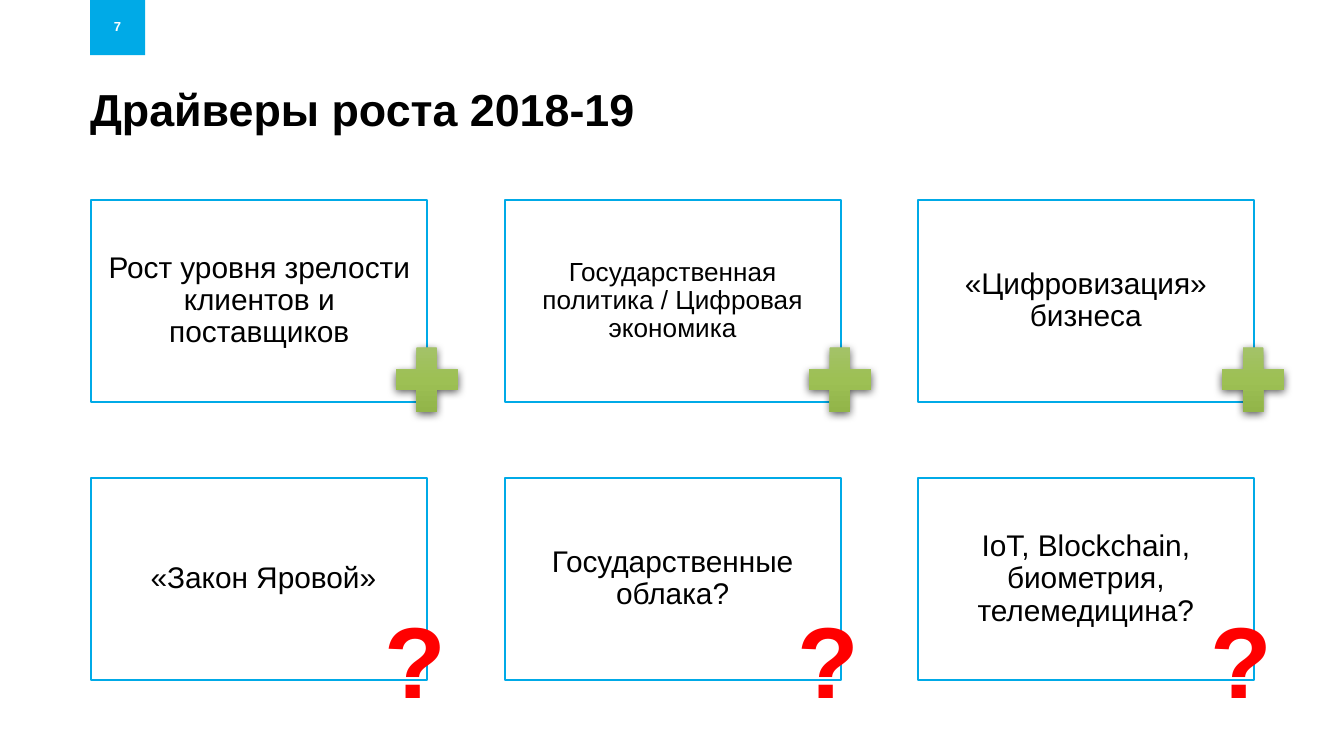
from copy import deepcopy

from lxml import etree
from pptx import Presentation
from pptx.dml.color import RGBColor
from pptx.enum.shapes import MSO_SHAPE
from pptx.enum.text import MSO_ANCHOR, PP_ALIGN
from pptx.oxml.ns import qn
from pptx.util import Inches, Pt

RECTANGLE, PLUS = MSO_SHAPE.RECTANGLE, MSO_SHAPE.MATH_PLUS
TOP, MIDDLE = MSO_ANCHOR.TOP, MSO_ANCHOR.MIDDLE
LEFT, CENTER = PP_ALIGN.LEFT, PP_ALIGN.CENTER

COLORS = {"accent": "00AAE7", "white": "FFFFFF", "black": "000000", "red": "FF0000"}
PLUS_GRADIENT = [(0, "A6C36F"), (0.5, "9DC054"), (1, "8DB045")]

TITLE = "Драйверы роста 2018-19"
PAGE_NUMBER = "7"
# Each row: its mark, then (driver, text size)
DRIVERS = [
    ("+", [("Рост уровня зрелости клиентов и поставщиков", 16),
           ("Государственная политика / Цифровая экономика", 14),
           ("«Цифровизация» бизнеса", 16)]),
    ("?", [(" «Закон Яровой»", 16),
           ("Государственные облака?", 16),
           ("IoT, Blockchain, биометрия, телемедицина?", 16)]),
]

SLIDE_WIDTH = Inches(10)
SLIDE_HEIGHT = SLIDE_WIDTH * 9 // 16
GRID_LEFT, GRID_TOP = 0.68, 1.49
LAST_COLUMN_LEFT = 6.83
CARD_WIDTH, CARD_HEIGHT = 2.5, 1.5
COLUMN_STEP = (LAST_COLUMN_LEFT - GRID_LEFT) / 2
ROW_STEP = 2.07
MARK_X = 2.18  # offset of a mark from the left of its card


def write(shape, text, size, color="black", bold=False, align=LEFT,
          anchor=TOP, margin=0, line_spacing=None, wrap=True):
    frame = shape.text_frame
    frame.word_wrap = wrap
    frame.vertical_anchor = anchor
    frame.margin_left = frame.margin_right = Inches(margin)
    frame.margin_top = frame.margin_bottom = Inches(margin)
    paragraph = frame.paragraphs[0]
    paragraph.alignment = align
    paragraph.line_spacing = line_spacing
    run = paragraph.add_run()
    run.text = text
    run.font.name = "Arial"
    run.font.size = Pt(size)
    run.font.bold = bold
    run.font.color.rgb = RGBColor.from_string(COLORS[color])


def add_box(slide, x, y, width, height):
    return slide.shapes.add_textbox(Inches(x), Inches(y), Inches(width), Inches(height))


def add_rectangle(slide, x, y, width, height, fill, line=None):
    rectangle = slide.shapes.add_shape(
        RECTANGLE, Inches(x), Inches(y), Inches(width), Inches(height))
    rectangle.shadow.inherit = False
    rectangle.fill.solid()
    rectangle.fill.fore_color.rgb = RGBColor.from_string(COLORS[fill])
    if line:
        rectangle.line.color.rgb = RGBColor.from_string(COLORS[line])
        rectangle.line.width = Pt(1)
    else:
        rectangle.line.fill.background()
    return rectangle


def add_plus(slide, x, y):
    plus = slide.shapes.add_shape(PLUS, Inches(x), Inches(y), Inches(0.63), Inches(0.65))
    plus.line.fill.background()
    plus.fill.gradient()
    plus.fill.gradient_angle = 270
    properties = plus._element.spPr
    stop_list = properties.find(qn("a:gradFill")).find(qn("a:gsLst"))
    stop_list.append(deepcopy(stop_list[0]))
    for stop, (position, color) in zip(plus.fill.gradient_stops, PLUS_GRADIENT):
        stop.position = position
        stop.color.rgb = RGBColor.from_string(color)

    plus.shadow.inherit = False
    shadow = etree.SubElement(
        properties.find(qn("a:effectLst")), qn("a:outerShdw"),
        blurRad=str(Pt(4.5)), dist=str(Pt(1.5)), dir="5400000", rotWithShape="0")
    shadow_color = etree.SubElement(shadow, qn("a:srgbClr"), val=COLORS["black"])
    etree.SubElement(shadow_color, qn("a:alpha"), val="63000")


def add_drivers(slide):
    marks = []
    for row, (mark, drivers) in enumerate(DRIVERS):
        for column, (driver, size) in enumerate(drivers):
            x = GRID_LEFT + column * COLUMN_STEP
            y = GRID_TOP + row * ROW_STEP
            card = add_rectangle(slide, x, y, CARD_WIDTH, CARD_HEIGHT, "white", "accent")
            write(card, driver, size, align=CENTER, anchor=MIDDLE,
                  margin=0.11, line_spacing=0.9)
            marks.append((mark, x + MARK_X, y))

    for mark, x, y in marks:
        if mark == "+":
            add_plus(slide, x, y + 1.01)
        else:
            question = add_box(slide, x, y + 0.89, 0.46, 0.91)
            write(question, mark, 54, color="red", bold=True, wrap=False)


def main():
    presentation = Presentation()
    presentation.slide_width = SLIDE_WIDTH
    presentation.slide_height = SLIDE_HEIGHT
    slide = presentation.slides.add_slide(presentation.slide_layouts[6])

    add_rectangle(slide, 0.67, 0, 0.41, 0.41, "accent")
    write(add_box(slide, 0.6, 0, 0.55, 0.39), PAGE_NUMBER, 7, color="white",
          bold=True, align=CENTER, anchor=MIDDLE)
    write(add_box(slide, 0.67, 0.61, 8.66, 0.4), TITLE, 24, bold=True)
    add_drivers(slide)

    presentation.save("out.pptx")


if __name__ == "__main__":
    main()
